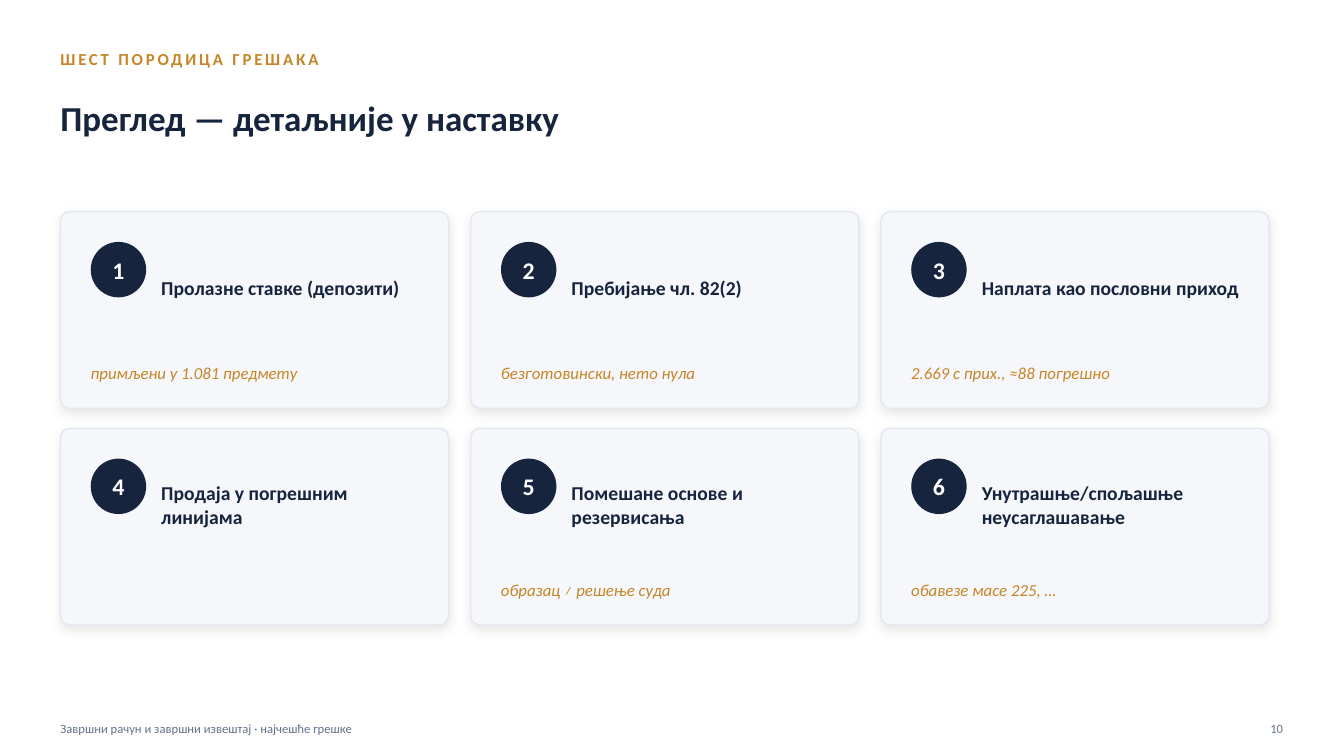
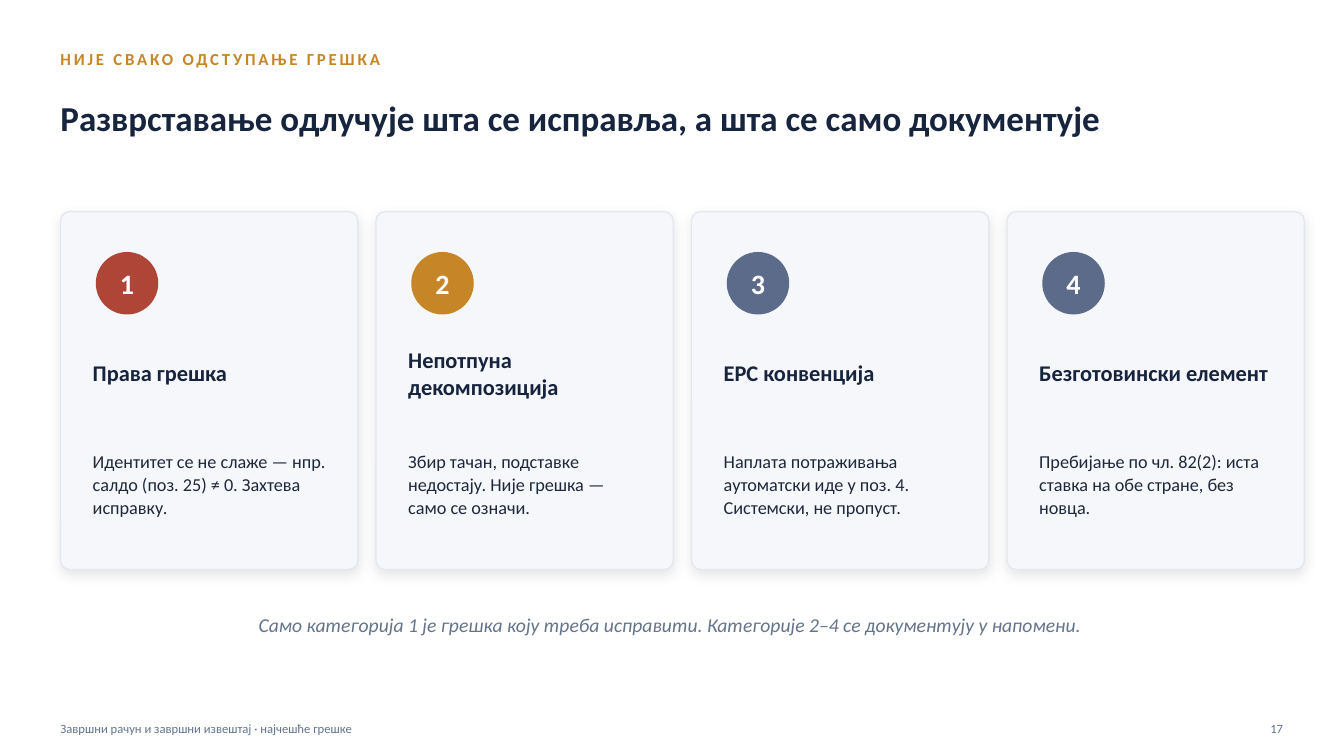
from dataclasses import dataclass
from typing import NamedTuple, Optional

import pptx
import pptx.dml.color
import pptx.enum.shapes
import pptx.enum.text
import pptx.oxml
import pptx.oxml.ns
import pptx.shapes.autoshape
import pptx.slide
import pptx.text.text
import pptx.util

Pt = pptx.util.Pt
RGBColor = pptx.dml.color.RGBColor
Align = pptx.enum.text.PP_ALIGN
Preset = pptx.enum.shapes.MSO_SHAPE

NAVY = RGBColor(0x16, 0x24, 0x3D)
OCHRE = RGBColor(0xC6, 0x85, 0x26)
BRICK = RGBColor(0xAE, 0x45, 0x36)
STEEL = RGBColor(0x5B, 0x6B, 0x89)
SLATE = RGBColor(0x64, 0x74, 0x8B)
INK = RGBColor(0x1E, 0x29, 0x3B)
PAPER = RGBColor(0xF5, 0xF7, 0xFB)
EDGE = RGBColor(0xE2, 0xE8, 0xF0)
WHITE = RGBColor(0xFF, 0xFF, 0xFF)

FONT = "Calibri"
FOOTER = "Завршни рачун и завршни извештај · најчешће грешке"
LEFT = 43.2
CONTENT_WIDTH = 871.2
CARDS_TOP = 151.2
CORNER_RADIUS = 6.48


class Box(NamedTuple):
    """Left, top, width and height in points."""
    left: float
    top: float
    width: float
    height: float

    def shifted(self, dx: float, dy: float) -> "Box":
        return self._replace(left=self.left + dx, top=self.top + dy)

    def lengths(self) -> list[pptx.util.Length]:
        return [Pt(value) for value in self]


@dataclass(frozen=True)
class TextStyle:
    size: float
    color: RGBColor
    bold: bool = False
    italic: bool = False
    align: Align = Align.LEFT
    letter_spacing: float = 0
    line_spacing: Optional[float] = None


@dataclass(frozen=True)
class CardLayout:
    """Grid of cards; the inner boxes are relative to the card corner."""
    columns: int
    width: float
    height: float
    gap_x: float
    gap_y: float
    badge: Box
    heading: Box
    detail: Box
    badge_style: TextStyle
    heading_style: TextStyle
    detail_style: TextStyle


@dataclass(frozen=True)
class Card:
    heading: str
    detail: str = ""
    badge_color: RGBColor = NAVY


EYEBROW_STYLE = TextStyle(12, OCHRE, bold=True, letter_spacing=2)
TITLE_STYLE = TextStyle(25, NAVY, bold=True)
FOOTER_STYLE = TextStyle(9, SLATE)
PAGE_STYLE = TextStyle(9, SLATE, align=Align.RIGHT)
CONCLUSION_STYLE = TextStyle(14, SLATE, italic=True, align=Align.CENTER)

FAMILY_LAYOUT = CardLayout(
    columns=3, width=277.2, height=140.4, gap_x=15.84, gap_y=14.4,
    badge=Box(21.6, 21.6, 39.6, 39.6),
    heading=Box(72, 20.16, 194.4, 68.4),
    detail=Box(21.6, 97.2, 237.6, 36),
    badge_style=TextStyle(17, WHITE, bold=True, align=Align.CENTER),
    heading_style=TextStyle(14, NAVY, bold=True),
    detail_style=TextStyle(12, OCHRE, italic=True),
)
CATEGORY_LAYOUT = CardLayout(
    columns=4, width=212.4, height=255.6, gap_x=12.96, gap_y=0,
    badge=Box(25.2, 28.8, 44.64, 44.64),
    heading=Box(23.04, 86.4, 169.2, 57.6),
    detail=Box(23.04, 140.4, 169.2, 108),
    badge_style=TextStyle(20, WHITE, bold=True, align=Align.CENTER),
    heading_style=TextStyle(16, NAVY, bold=True),
    detail_style=TextStyle(13, INK, line_spacing=1.05),
)

FAMILIES = [
    Card("Пролазне ставке (депозити)", "примљени у 1.081 предмету"),
    Card("Пребијање чл. 82(2)", "безготовински, нето нула"),
    Card("Наплата као пословни приход", "2.669 с прих., ≈88 погрешно"),
    Card("Продаја у погрешним линијама"),
    Card("Помешане основе и резервисања", "образац ≠ решење суда"),
    Card("Унутрашње/спољашње неусаглашавање", "обавезе масе 225, …"),
]
CATEGORIES = [
    Card("Права грешка",
         "Идентитет се не слаже — нпр. салдо (поз. 25) ≠ 0. Захтева исправку.", BRICK),
    Card("Непотпуна декомпозиција",
         "Збир тачан, подставке недостају. Није грешка — само се означи.", OCHRE),
    Card("ЕРС конвенција",
         "Наплата потраживања аутоматски иде у поз. 4. Системски, не пропуст.", STEEL),
    Card("Безготовински елемент",
         "Пребијање по чл. 82(2): иста ставка на обе стране, без новца.", STEEL),
]


def write(frame: pptx.text.text.TextFrame, text: str, style: TextStyle) -> None:
    frame.word_wrap = True
    frame.vertical_anchor = pptx.enum.text.MSO_ANCHOR.MIDDLE
    frame.margin_left = frame.margin_top = frame.margin_right = frame.margin_bottom = 0
    paragraph = frame.paragraphs[0]
    paragraph.alignment = style.align
    if style.line_spacing:
        paragraph.line_spacing = style.line_spacing
    run = paragraph.add_run()
    run.text = text
    run.font.name = FONT
    run.font.size = Pt(style.size)
    run.font.bold = style.bold
    run.font.italic = style.italic
    run.font.color.rgb = style.color
    if style.letter_spacing:
        run.font._element.set("spc", str(round(style.letter_spacing * 100)))


def add_text(slide: pptx.slide.Slide, box: Box, text: str, style: TextStyle) -> None:
    write(slide.shapes.add_textbox(*box.lengths()).text_frame, text, style)


def add_filled(slide: pptx.slide.Slide, preset: Preset, box: Box,
               fill: RGBColor) -> pptx.shapes.autoshape.Shape:
    shape = slide.shapes.add_shape(preset, *box.lengths())
    shape.shadow.inherit = False
    shape.fill.solid()
    shape.fill.fore_color.rgb = fill
    return shape


def add_soft_shadow(shape: pptx.shapes.autoshape.Shape) -> None:
    effects = shape._element.spPr.find(pptx.oxml.ns.qn("a:effectLst"))
    effects.append(pptx.oxml.parse_xml(
        f'<a:outerShdw {pptx.oxml.ns.nsdecls("a")} blurRad="{Pt(9)}" dist="{Pt(3)}" '
        'dir="5400000" algn="ctr" rotWithShape="0">'
        '<a:srgbClr val="000000"><a:alpha val="10000"/></a:srgbClr></a:outerShdw>'))


def add_card(slide: pptx.slide.Slide, layout: CardLayout, index: int, card: Card) -> None:
    row, column = divmod(index, layout.columns)
    left = LEFT + column * (layout.width + layout.gap_x)
    top = CARDS_TOP + row * (layout.height + layout.gap_y)

    panel = add_filled(slide, Preset.ROUNDED_RECTANGLE,
                       Box(left, top, layout.width, layout.height), PAPER)
    panel.adjustments[0] = CORNER_RADIUS / min(layout.width, layout.height)
    panel.line.color.rgb = EDGE
    panel.line.width = Pt(1)
    add_soft_shadow(panel)

    badge = add_filled(slide, Preset.OVAL, layout.badge.shifted(left, top), card.badge_color)
    badge.line.fill.background()
    write(badge.text_frame, str(index + 1), layout.badge_style)

    add_text(slide, layout.heading.shifted(left, top), card.heading, layout.heading_style)
    if card.detail:
        add_text(slide, layout.detail.shifted(left, top), card.detail, layout.detail_style)


def add_card_slide(deck: pptx.presentation.Presentation, eyebrow: str, title: str, page: int,
                   layout: CardLayout, cards: list[Card]) -> pptx.slide.Slide:
    slide = deck.slides.add_slide(deck.slide_layouts[6])
    slide.background.fill.solid()
    slide.background.fill.fore_color.rgb = WHITE
    add_text(slide, Box(LEFT, 30.24, 684, 23.04), eyebrow, EYEBROW_STYLE)
    add_text(slide, Box(LEFT, 53.28, CONTENT_WIDTH, 61.2), title, TITLE_STYLE)
    add_text(slide, Box(LEFT, 509.76, 648, 21.6), FOOTER, FOOTER_STYLE)
    add_text(slide, Box(880.56, 509.76, 36, 21.6), str(page), PAGE_STYLE)
    for index, card in enumerate(cards):
        add_card(slide, layout, index, card)
    return slide


def main() -> None:
    deck = pptx.Presentation()
    deck.slide_width, deck.slide_height = Pt(960), Pt(540)
    add_card_slide(deck, "ШЕСТ ПОРОДИЦА ГРЕШАКА", "Преглед — детаљније у наставку",
                   10, FAMILY_LAYOUT, FAMILIES)
    sorting = add_card_slide(
        deck, "НИЈЕ СВАКО ОДСТУПАЊЕ ГРЕШКА",
        "Разврставање одлучује шта се исправља, а шта се само документује",
        17, CATEGORY_LAYOUT, CATEGORIES)
    add_text(sorting, Box(LEFT, 428.4, CONTENT_WIDTH, 36),
             "Само категорија 1 је грешка коју треба исправити. "
             "Категорије 2–4 се документују у напомени.", CONCLUSION_STYLE)
    deck.save("out.pptx")


if __name__ == "__main__":
    main()
